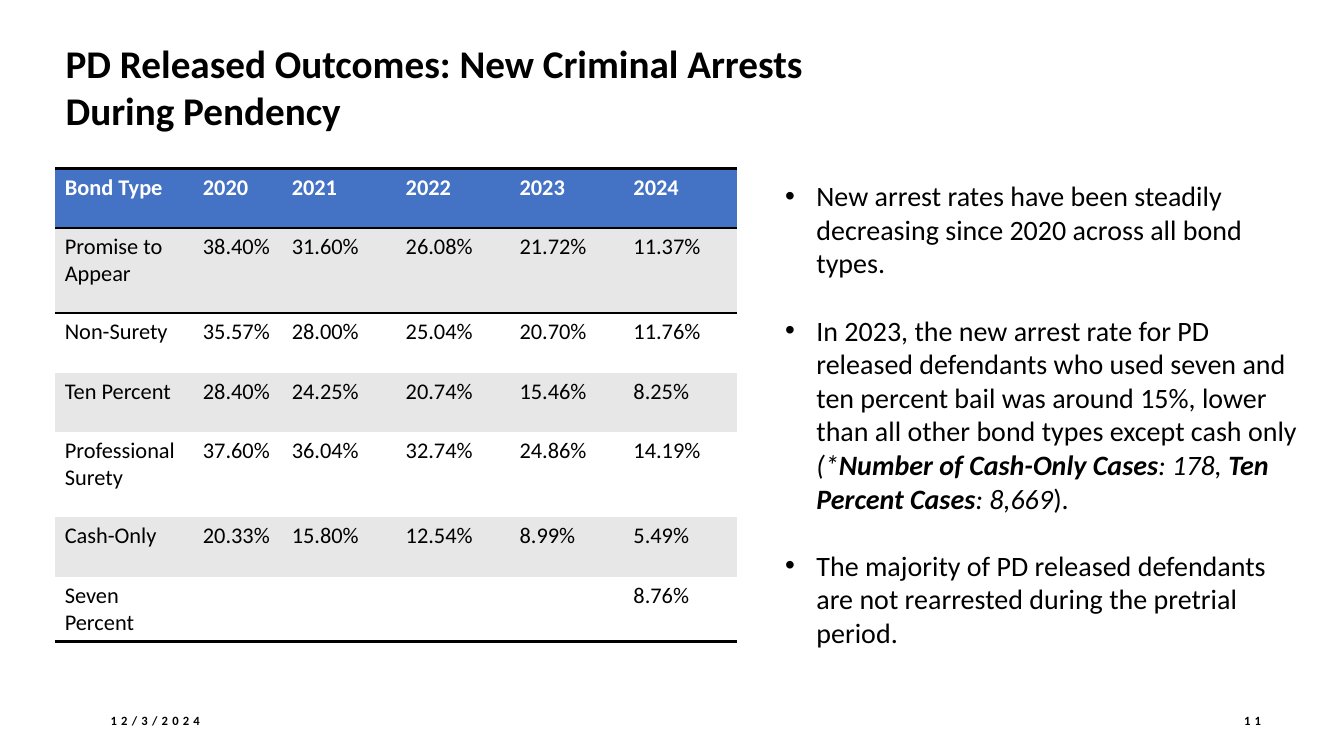
from dataclasses import dataclass

from lxml import etree
from pptx import Presentation
from pptx.dml.color import RGBColor
from pptx.enum.text import MSO_ANCHOR, MSO_AUTO_SIZE, PP_ALIGN
from pptx.oxml.ns import qn
from pptx.util import Cm, Pt

LEFT, RIGHT = PP_ALIGN.LEFT, PP_ALIGN.RIGHT
TOP, MIDDLE = MSO_ANCHOR.TOP, MSO_ANCHOR.MIDDLE
NO_AUTOFIT = MSO_AUTO_SIZE.NONE

FONT = "Calibri"
BLACK, WHITE, BLUE, GRAY = "000000", "FFFFFF", "4472C4", "E7E7E7"
NO_STYLE_NO_GRID = "{2D5ABB26-0587-4C30-8999-92F81FD0307C}"


@dataclass
class Span:
    text: str
    bold: bool = False
    italic: bool = False


@dataclass
class FooterItem:
    text: str
    left: float
    width: float
    align: PP_ALIGN


TITLE = "PD Released Outcomes: New Criminal Arrests During Pendency"

BULLETS = [
    [Span("New arrest rates have been steadily decreasing since 2020 across all bond types.")],
    [
        Span("In 2023, the new arrest rate for PD released defendants who used seven and "
             "ten percent bail was around 15%, lower than all other bond types except cash only "),
        Span("(*", italic=True),
        Span("Number of Cash-Only Cases", bold=True, italic=True),
        Span(": 178, ", italic=True),
        Span("Ten Percent Cases", bold=True, italic=True),
        Span(": 8,669", italic=True),
        Span(")."),
    ],
    [Span("The majority of PD released defendants are not rearrested during the pretrial period.")],
]

ARREST_RATES = [
    ["Bond Type", "2020", "2021", "2022", "2023", "2024"],
    ["Promise to Appear", "38.40%", "31.60%", "26.08%", "21.72%", "11.37%"],
    ["Non-Surety", "35.57%", "28.00%", "25.04%", "20.70%", "11.76%"],
    ["Ten Percent", "28.40%", "24.25%", "20.74%", "15.46%", "8.25%"],
    ["Professional Surety", "37.60%", "36.04%", "32.74%", "24.86%", "14.19%"],
    ["Cash-Only", "20.33%", "15.80%", "12.54%", "8.99%", "5.49%"],
    ["Seven Percent", "", "", "", "", "8.76%"],
]
COL_WIDTHS = [3.48, 2.24] + [2.87] * 4
ROW_HEIGHTS = [1.5, 2.14, 1.5, 1.5, 2.14, 1.5, 1.6]

FOOTER = [
    FooterItem("12/3/2024", 2.54, 7.62, LEFT),
    FooterItem("11", 30.02, 2.01, RIGHT),
]


def rgb(color: str) -> RGBColor:
    return RGBColor.from_string(color)


def add_text(p, text: str, *, size: float, color: str = BLACK, bold: bool = False,
             italic: bool = False, spacing: float = 0) -> None:
    r = p.add_run()
    r.text = text
    r.font.name = FONT
    r.font.size = Pt(size)
    r.font.bold = bold
    r.font.italic = italic
    r.font.color.rgb = rgb(color)
    if spacing:
        r.font._element.set("spc", str(round(spacing * 100)))


def place(sp, left: float, top: float, width: float, height: float) -> None:
    sp.left, sp.top, sp.width, sp.height = Cm(left), Cm(top), Cm(width), Cm(height)


def set_frame(tf, anchor: MSO_ANCHOR) -> None:
    """Wrap the text at a fixed size, anchored as given."""
    tf.word_wrap = True
    tf.auto_size = NO_AUTOFIT
    tf.vertical_anchor = anchor


def add_title(slide) -> None:
    sp = slide.shapes.title
    place(sp, 1.4, 0.86, 20.62, 2.64)
    sp.fill.solid()
    sp.fill.fore_color.rgb = rgb(WHITE)
    set_frame(sp.text_frame, TOP)
    p = sp.text_frame.paragraphs[0]
    p.alignment = LEFT
    add_text(p, TITLE, size=28, bold=True)


def add_bullets(slide) -> None:
    sp = slide.placeholders[1]
    place(sp, 19.53, 3.53, 13.59, 15.47)
    tf = sp.text_frame
    set_frame(tf, TOP)
    tf.margin_top = Cm(0.97)
    for i, spans in enumerate(BULLETS):
        p = tf.add_paragraph() if i else tf.paragraphs[0]
        p.space_before = Pt(0)
        p.space_after = Pt(24)
        pPr = p._p.get_or_add_pPr()
        pPr.set("marL", str(Cm(0.79)))
        pPr.set("indent", str(-Cm(0.79)))
        for span in spans:
            add_text(p, span.text, size=20, bold=span.bold, italic=span.italic)


def add_borders(cell, sides: list[str]) -> None:
    """Draw black 2 pt lines; sides are "T" and "B", in that order."""
    tcPr = cell._tc.get_or_add_tcPr()
    for i, side in enumerate(sides):
        ln = etree.Element(qn(f"a:ln{side}"), w=str(Pt(2)))
        fill = etree.SubElement(ln, qn("a:solidFill"))
        etree.SubElement(fill, qn("a:srgbClr"), val=BLACK)
        tcPr.insert(i, ln)


def add_rates_table(slide) -> None:
    last = len(ARREST_RATES) - 1
    frame = slide.shapes.add_table(len(ARREST_RATES), len(COL_WIDTHS), Cm(1.38), Cm(4.25),
                                   Cm(sum(COL_WIDTHS)), Cm(sum(ROW_HEIGHTS)))
    table = frame.table
    table.horz_banding = False
    table._tbl.tblPr.find(qn("a:tableStyleId")).text = NO_STYLE_NO_GRID
    for column, width in zip(table.columns, COL_WIDTHS):
        column.width = Cm(width)
    for i, values in enumerate(ARREST_RATES):
        table.rows[i].height = Cm(ROW_HEIGHTS[i])
        header = i == 0
        fill = BLUE if header else GRAY if i % 2 else WHITE
        sides = ["T"] * (i <= 1) + ["B"] * (i in (0, last))
        for j, value in enumerate(values):
            cell = table.cell(i, j)
            cell.fill.solid()
            cell.fill.fore_color.rgb = rgb(fill)
            add_borders(cell, sides)
            if value:
                add_text(cell.text_frame.paragraphs[0], value, size=16,
                         color=WHITE if header else BLACK, bold=header)


def add_footer(slide) -> None:
    for item in FOOTER:
        sp = slide.shapes.add_textbox(Cm(item.left), Cm(17.65), Cm(item.width), Cm(1.02))
        set_frame(sp.text_frame, MIDDLE)
        p = sp.text_frame.paragraphs[0]
        p.alignment = item.align
        add_text(p, item.text, size=9, bold=True, spacing=3)


def main() -> None:
    prs = Presentation()
    prs.slide_width, prs.slide_height = Cm(33.87), Cm(19.05)
    slide = prs.slides.add_slide(prs.slide_layouts[1])
    add_title(slide)
    add_bullets(slide)
    add_rates_table(slide)
    add_footer(slide)
    prs.save("out.pptx")


if __name__ == "__main__":
    main()
